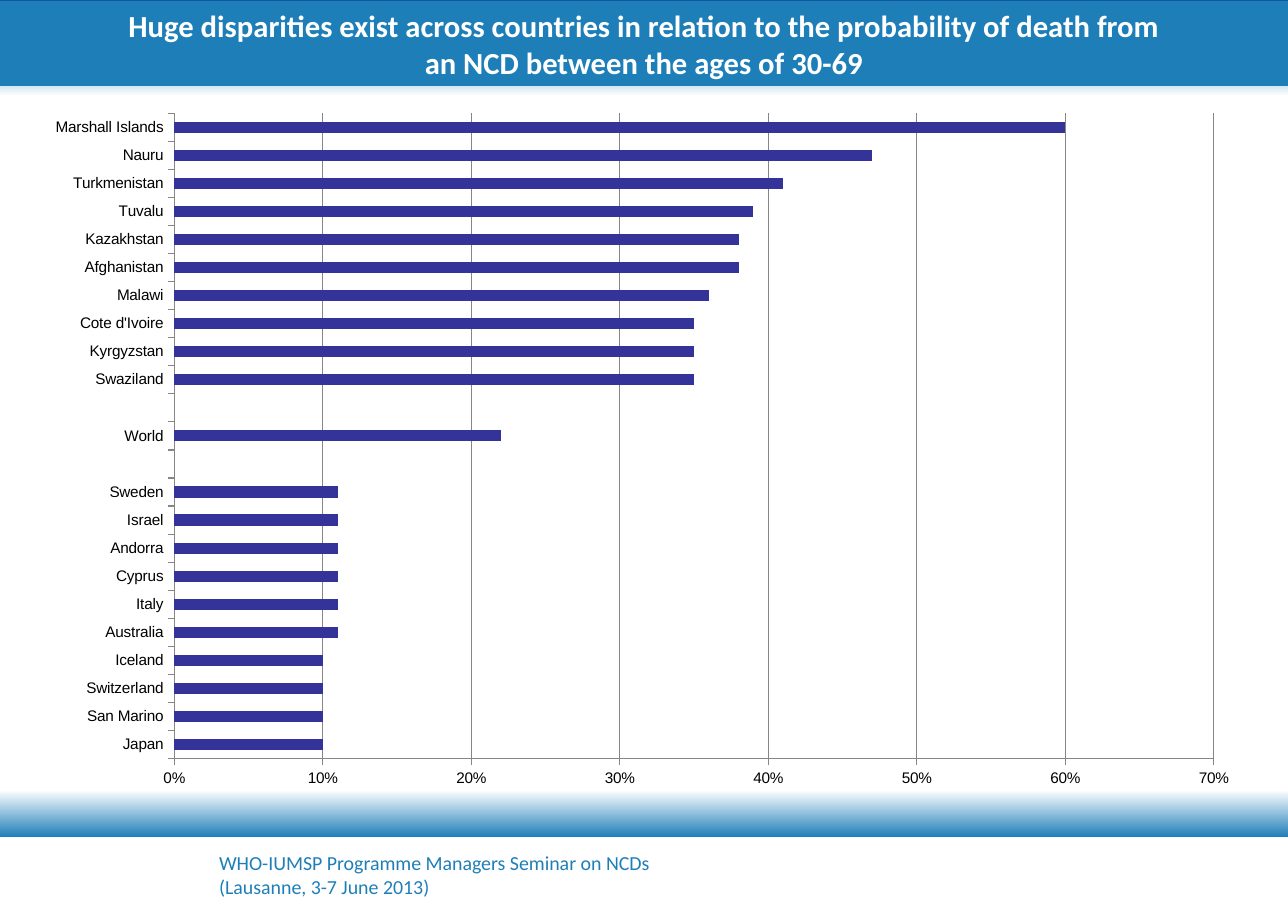
import dataclasses

import lxml.etree
import pptx
import pptx.chart.data
import pptx.dml.color
import pptx.enum.chart
import pptx.enum.shapes
import pptx.enum.text
import pptx.oxml.ns
import pptx.util

Pt = pptx.util.Pt
RGB = pptx.dml.color.RGBColor.from_string


@dataclasses.dataclass(frozen=True)
class Theme:
    blue: RGB = RGB("1E7FB8")
    dark_blue: RGB = RGB("1255A4")
    white: RGB = RGB("FFFFFF")
    black: RGB = RGB("000000")
    bar: RGB = RGB("333399")
    grid: RGB = RGB("868686")
    heading_font: str = "Calibri"
    chart_font: str = "Arial"
    title_size: float = 20
    footer_size: float = 13
    chart_size: float = 10


@dataclasses.dataclass(frozen=True)
class Box:
    left: float
    top: float
    width: float
    height: float

    def place(self):
        return [Pt(length) for length in dataclasses.astuple(self)]


THEME = Theme()
PAGE = Box(0, 0, 841.7, 595.4)

DEATH_PROBABILITY = [
    ("Japan", 0.1), ("San Marino", 0.1), ("Switzerland", 0.1),
    ("Iceland", 0.1), ("Australia", 0.11), ("Italy", 0.11),
    ("Cyprus", 0.11), ("Andorra", 0.11), ("Israel", 0.11),
    ("Sweden", 0.11), ("", None), ("World", 0.22), ("", None),
    ("Swaziland", 0.35), ("Kyrgyzstan", 0.35), ("Cote d'Ivoire", 0.35),
    ("Malawi", 0.36), ("Afghanistan", 0.38), ("Kazakhstan", 0.38),
    ("Tuvalu", 0.39), ("Turkmenistan", 0.41), ("Nauru", 0.47),
    ("Marshall Islands", 0.6),
]


def add_band(page, box):
    band = page.shapes.add_shape(
        pptx.enum.shapes.MSO_SHAPE.RECTANGLE, *box.place())
    band.shadow.inherit = False
    band.line.fill.background()
    return band


def add_fading_band(page, box, rotation=0):
    band = add_band(page, box)
    band.fill.gradient()
    band.fill.gradient_angle = 270
    for stop, colour in zip(band.fill.gradient_stops, (THEME.blue, THEME.white)):
        stop.color.rgb = colour
    band.rotation = rotation


def add_header(page, box, lines):
    strip = add_band(page, Box(box.left, box.top, box.width, 28.8))
    strip.fill.solid()
    strip.fill.fore_color.rgb = THEME.dark_blue
    add_fading_band(page, Box(box.left, box.top + 31, box.width, 31.7))

    title = page.shapes.title
    page.shapes._spTree.append(title._element)
    title.left, title.top, title.width, title.height = Box(
        box.left, box.top + 0.7, box.width, box.height - 0.7).place()
    title.fill.solid()
    title.fill.fore_color.rgb = THEME.blue
    frame = title.text_frame
    frame.auto_size = pptx.enum.text.MSO_AUTO_SIZE.NONE
    frame.vertical_anchor = pptx.enum.text.MSO_ANCHOR.MIDDLE
    para = frame.paragraphs[0]
    para.alignment = pptx.enum.text.PP_ALIGN.CENTER
    for index, line in enumerate(lines):
        if index:
            para.add_line_break()
        para.add_run().text = line
    para.font.name = THEME.heading_font
    para.font.size = Pt(THEME.title_size)
    para.font.bold = True
    para.font.color.rgb = THEME.white


def add_footer(page, box, lines):
    add_fading_band(page, Box(box.left, box.top, box.width, 31), rotation=180)
    caption = Box(box.left + 136.1, box.top + 36, 310.3, 38.9)
    frame = page.shapes.add_textbox(*caption.place()).text_frame
    frame.word_wrap = True
    frame.text = "\n".join(lines)
    for para in frame.paragraphs:
        para.alignment = pptx.enum.text.PP_ALIGN.LEFT
        para.font.name = THEME.heading_font
        para.font.size = Pt(THEME.footer_size)
        para.font.color.rgb = THEME.blue


def fix_plot_area(chart, **fractions):
    qn = pptx.oxml.ns.qn
    area = chart._chartSpace.chart.plotArea
    for previous in area.findall(qn("c:layout")):
        area.remove(previous)
    layout = lxml.etree.Element(qn("c:layout"))
    area.insert(0, layout)
    manual = lxml.etree.SubElement(layout, qn("c:manualLayout"))
    settings = {"layoutTarget": "inner", "xMode": "edge", "yMode": "edge"}
    for name, value in (settings | fractions).items():
        lxml.etree.SubElement(manual, qn(f"c:{name}"), val=str(value))


def add_country_chart(page, box, rows):
    data = pptx.chart.data.CategoryChartData(number_format="0%")
    data.categories = [country for country, share in rows]
    data.add_series("Series 1", [share for country, share in rows])
    chart = page.shapes.add_chart(
        pptx.enum.chart.XL_CHART_TYPE.BAR_CLUSTERED, *box.place(), data).chart
    chart.has_legend = False
    chart.has_title = False
    chart.font.name = THEME.chart_font
    chart.font.size = Pt(THEME.chart_size)
    chart.font.color.rgb = THEME.black

    plot = chart.plots[0]
    plot.vary_by_categories = False
    plot.gap_width = 150
    bars = plot.series[0].format.fill
    bars.solid()
    bars.fore_color.rgb = THEME.bar

    shares = chart.value_axis
    shares.minimum_scale, shares.maximum_scale = 0, 0.7
    shares.major_unit = 0.1
    shares.has_major_gridlines = True
    shares.tick_labels.number_format = "0%"
    shares.tick_labels.number_format_is_linked = False
    for axis in (chart.category_axis, shares):
        axis.major_tick_mark = pptx.enum.chart.XL_TICK_MARK.OUTSIDE
    for part in (chart.category_axis, shares, shares.major_gridlines):
        part.format.line.color.rgb = THEME.grid
        part.format.line.width = Pt(0.75)
    fix_plot_area(chart, x=0.12, y=0.02, w=0.85, h=0.92)


def build_slide(deck):
    page = deck.slides.add_slide(deck.slide_layouts[5])
    add_header(page, Box(0, 0, PAGE.width, 56.2), [
        "Huge disparities exist across countries in relation to the probability of death from",
        "an NCD between the ages of 30-69",
    ])
    add_footer(page, Box(0, 516.2, PAGE.width, 79.2), [
        "WHO-IUMSP Programme Managers Seminar on NCDs",
        "(Lausanne, 3-7 June 2013)",
    ])
    add_country_chart(page, Box(18, 64.8, 799.2, 458.6), DEATH_PROBABILITY)


def main():
    deck = pptx.Presentation()
    deck.slide_width, deck.slide_height = Pt(PAGE.width), Pt(PAGE.height)
    build_slide(deck)
    deck.save("out.pptx")


if __name__ == "__main__":
    main()
